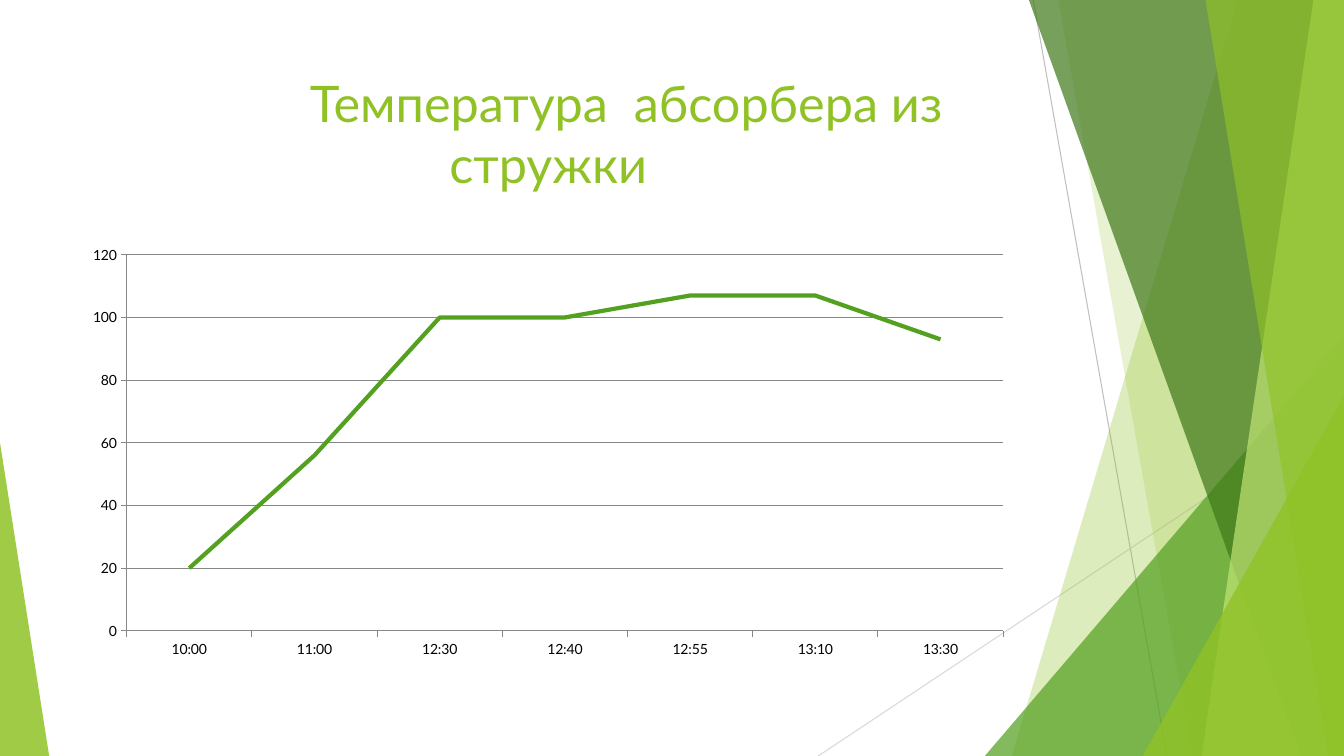
from pptx import Presentation
from pptx.chart.data import CategoryChartData
from pptx.dml.color import RGBColor
from pptx.enum.chart import XL_CHART_TYPE, XL_TICK_MARK
from pptx.enum.shapes import MSO_CONNECTOR, MSO_SHAPE
from pptx.enum.text import MSO_ANCHOR, PP_ALIGN
from pptx.oxml import parse_xml
from pptx.oxml.ns import nsdecls, qn
from pptx.util import Cm, Pt
from lxml import etree

LINE_CHART = XL_CHART_TYPE.LINE_STACKED
TICK_OUT, TICK_NONE = XL_TICK_MARK.OUTSIDE, XL_TICK_MARK.NONE
STRAIGHT = MSO_CONNECTOR.STRAIGHT
TRIANGLE = MSO_SHAPE.ISOSCELES_TRIANGLE
TOP, CENTER = MSO_ANCHOR.TOP, PP_ALIGN.CENTER

WIDTH, HEIGHT = 33.87, 19.05
LIME, GREEN, FOREST, PALE = "90C226", "54A021", "3F7819", "C0E474"
GRAY = "878787"


def rgb(color):
    return RGBColor.from_string(color)


class Board:
    font = "Lato"

    def __init__(self, slide):
        self.slide = slide
        self.shapes = slide.shapes

    def paint(self, shape, color, opacity):
        shape.shadow.inherit = False
        shape.line.fill.background()
        shape.fill.solid()
        shape.fill.fore_color.rgb = rgb(color)
        tint = shape.fill._xPr.find(qn("a:solidFill"))[0]
        etree.SubElement(tint, qn("a:alpha"), val=str(opacity * 1000))

    def line(self, start, end, color):
        line = self.shapes.add_connector(
            STRAIGHT, *(Cm(value) for value in start + end))
        line.line.color.rgb = rgb(color)
        line.line.width = Pt(0.75)
        etree.SubElement(line._element.spPr, qn("a:effectLst"))

    def shard(self, top_x, bottom_x, color, opacity):
        """Panel from a slanted left edge to the right edge of the slide."""
        outline = self.shapes.build_freeform(Cm(top_x), 0)
        corners = [(WIDTH, 0), (WIDTH, HEIGHT), (bottom_x, HEIGHT)]
        outline.add_line_segments([(Cm(x), Cm(y)) for x, y in corners])
        self.paint(outline.convert_to_shape(), color, opacity)

    def corner(self, left, top, width, peak, color, opacity):
        """Triangle that stands on the bottom edge of the slide."""
        triangle = self.shapes.add_shape(
            TRIANGLE, Cm(left), Cm(top), Cm(width), Cm(HEIGHT - top))
        triangle.adjustments[0] = peak
        self.paint(triangle, color, opacity)

    def title(self, text, left, top, width, height, indent):
        frame = self.shapes.add_textbox(
            Cm(left), Cm(top), Cm(width), Cm(height)).text_frame
        frame.word_wrap = True
        frame.vertical_anchor = TOP
        paragraph = frame.paragraphs[0]
        paragraph.text = text
        paragraph.alignment = CENTER
        paragraph.font.name = self.font
        paragraph.font.size = Pt(36)
        paragraph.font.color.rgb = rgb(LIME)
        properties = paragraph._p.get_or_add_pPr()
        properties.set("marL", "0")
        properties.set("indent", str(Cm(indent)))

    def line_chart(self, readings, left, top, width, height, plot):
        data = CategoryChartData()
        data.categories = list(readings)
        data.add_series("Series 1", list(readings.values()))
        chart = self.shapes.add_chart(
            LINE_CHART, Cm(left), Cm(top), Cm(width), Cm(height), data).chart
        chart.has_legend = False
        chart.has_title = False
        chart.font.name = self.font
        chart.font.size = Pt(10)
        chart.font.color.rgb = rgb("000000")

        series = chart.plots[0].series[0]
        series.smooth = False
        series.format.line.color.rgb = rgb(GREEN)
        series.format.line.width = Pt(3)

        for axis in (chart.category_axis, chart.value_axis):
            axis.major_tick_mark = TICK_OUT
            axis.minor_tick_mark = TICK_NONE
            axis.format.line.color.rgb = rgb(GRAY)
            axis.format.line.width = Pt(0.75)
        temperature = chart.value_axis
        temperature.minimum_scale = 0
        temperature.maximum_scale = 120
        temperature.major_unit = 20
        temperature.has_major_gridlines = True
        grid = temperature.major_gridlines.format.line
        grid.color.rgb = rgb(GRAY)
        grid.width = Pt(0.75)

        # Fixed inner plot area, as fractions of the chart
        modes = '<c:layoutTarget val="inner"/><c:xMode val="edge"/><c:yMode val="edge"/>'
        sizes = "".join(f'<c:{key} val="{value}"/>' for key, value in zip("xywh", plot))
        layout = parse_xml(
            f'<c:layout {nsdecls("c")}><c:manualLayout>{modes}{sizes}'
            "</c:manualLayout></c:layout>")
        area = chart._chartSpace.chart.plotArea
        for previous in area.findall(qn("c:layout")):
            area.remove(previous)
        area.insert(0, layout)


def main():
    deck = Presentation()
    deck.slide_width, deck.slide_height = Cm(WIDTH), Cm(HEIGHT)
    board = Board(deck.slides.add_slide(deck.slide_layouts[6]))

    # Green decoration
    board.line((26.04, 0), (29.41, HEIGHT), "BFBFBF")
    board.line((WIDTH, 10.24), (20.62, HEIGHT), "D9D9D9")
    board.shard(31.19, 25.5, LIME, 30)
    board.shard(26.67, 30.05, LIME, 20)
    board.corner(24.82, 8.46, 9.05, 1, GREEN, 72)
    board.shard(25.93, 32.79, FOREST, 70)
    board.shard(33.1, 30.28, PALE, 70)
    board.shard(30.38, 33.48, LIME, 65)
    board.corner(28.8, 9.98, 5.07, 1, LIME, 80)
    board.corner(0, 11.15, 1.24, 0, LIME, 85)

    # Title
    board.title("Температура  абсорбера из стружки",
                1.88, 1.7, 23.88, 3.66, indent=3.93)

    # Temperature over time
    readings = {"10:00": 20, "11:00": 56, "12:30": 100, "12:40": 100,
                "12:55": 107, "13:10": 107, "13:30": 93}
    board.line_chart(readings, 1.88, 5.99, 23.88, 10.77,
                     plot=(0.055, 0.04, 0.925, 0.88))

    deck.save("out.pptx")


if __name__ == "__main__":
    main()
